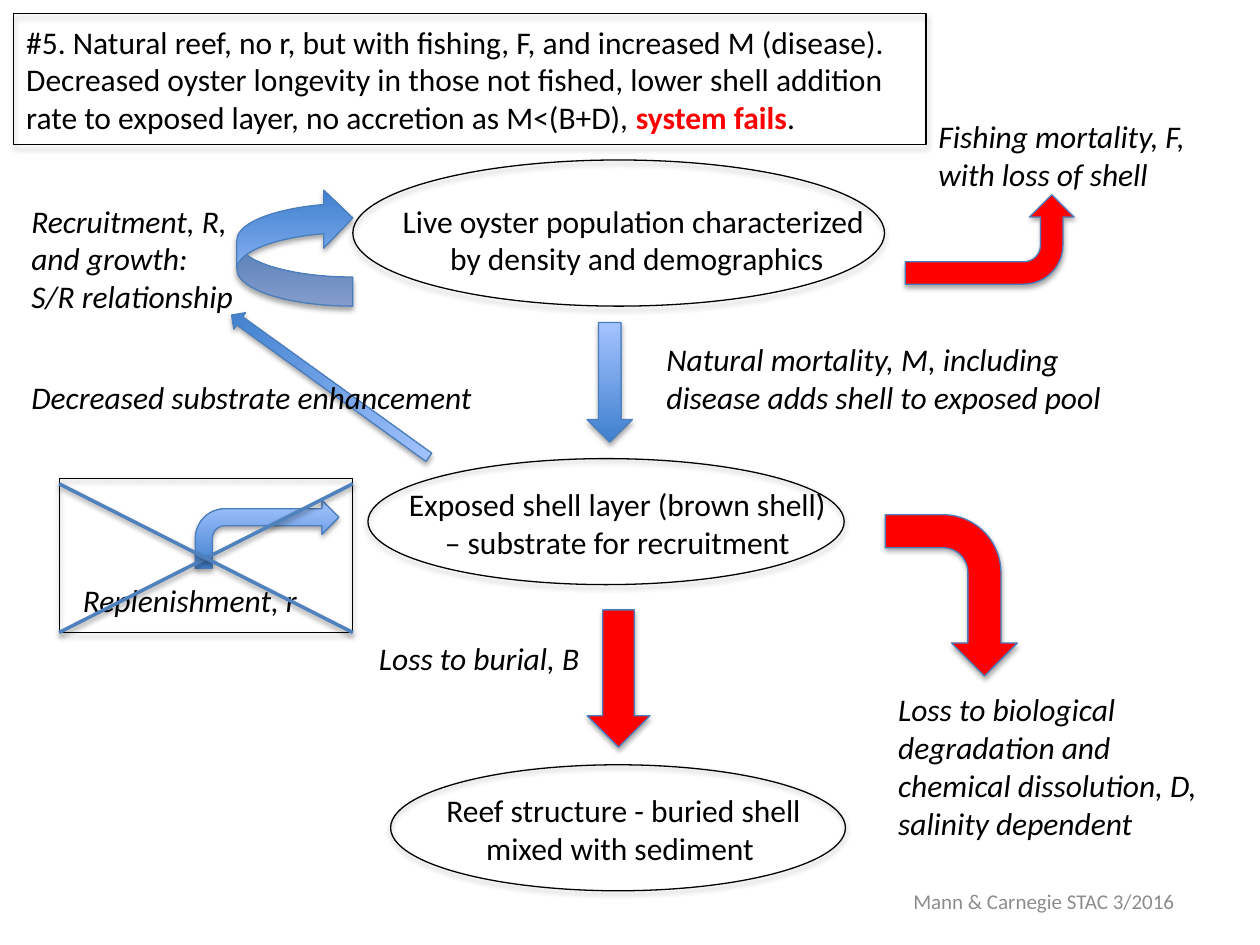
from lxml import etree
from pptx import Presentation
from pptx.dml.color import RGBColor
from pptx.enum.shapes import MSO_CONNECTOR, MSO_SHAPE
from pptx.enum.text import MSO_ANCHOR, MSO_AUTO_SIZE, PP_ALIGN
from pptx.oxml.ns import qn
from pptx.util import Inches, Pt

STRAIGHT = MSO_CONNECTOR.STRAIGHT
BENT = MSO_SHAPE.BENT_ARROW
DOWN = MSO_SHAPE.DOWN_ARROW
CURVED = MSO_SHAPE.CURVED_RIGHT_ARROW
ELLIPSE = MSO_SHAPE.OVAL
RECTANGLE = MSO_SHAPE.RECTANGLE
LEFT, CENTER = PP_ALIGN.LEFT, PP_ALIGN.CENTER

BLACK, RED, GRAY = "000000", "FF0000", "8C8C8C"
EDGE_BLUE, CROSS_BLUE = "4B7EBC", "4F81BD"
BLUE_GRADIENT = ("3F80CE", "A4C4FF")


def color(hex_value):
    return RGBColor.from_string(hex_value)


class ReefSlide:
    font_name = "Calibri"

    def __init__(self, presentation):
        self.slide = presentation.slides.add_slide(presentation.slide_layouts[6])

    def text(self, box, lines, italic=False, align=LEFT, wrap=False,
             size=18, font_color=BLACK):
        """Add a text box; a line is a string or a list of (text, emphasized)."""
        shape = self.slide.shapes.add_textbox(*map(Inches, box))
        frame = shape.text_frame
        frame.word_wrap = wrap
        frame.auto_size = MSO_AUTO_SIZE.SHAPE_TO_FIT_TEXT
        for index, line in enumerate(lines):
            paragraph = frame.add_paragraph() if index else frame.paragraphs[0]
            paragraph.alignment = align
            paragraph.font.name = self.font_name
            paragraph.font.size = Pt(size)
            paragraph.font.italic = italic
            paragraph.font.color.rgb = color(font_color)
            parts = [(line, False)] if isinstance(line, str) else line
            for words, emphasized in parts:
                run = paragraph.add_run()
                run.text = words
                if emphasized:
                    run.font.bold = True
                    run.font.color.rgb = color(RED)
        return shape

    def outline(self, kind, box):
        shape = self.slide.shapes.add_shape(kind, *map(Inches, box))
        shape.fill.background()
        self.finish(shape, BLACK, 0.75)

    def arrow(self, kind, box, fill, rotation=0, flip=None):
        shape = self.slide.shapes.add_shape(kind, *map(Inches, box))
        shape.rotation = rotation
        if flip:
            shape._element.spPr.xfrm.set(flip, "1")
        if fill == BLUE_GRADIENT:
            shape.fill.gradient()
            shape.fill.gradient_angle = 90
            for position, (stop, shade) in enumerate(zip(shape.fill.gradient_stops, fill)):
                stop.position = position
                stop.color.rgb = color(shade)
        else:
            shape.fill.solid()
            shape.fill.fore_color.rgb = color(fill)
        self.finish(shape, EDGE_BLUE, 0.75)

    def line(self, start, end):
        connector = self.slide.shapes.add_connector(
            STRAIGHT, *map(Inches, (*start, *end)))
        self.finish(connector, CROSS_BLUE, 2, distance=1.6, opacity=38)

    def finish(self, shape, line_color, width, distance=1.8, opacity=35):
        """Set the line and a soft shadow below the shape."""
        shape.line.color.rgb = color(line_color)
        shape.line.width = Pt(width)
        effects = etree.SubElement(shape._element.spPr, qn("a:effectLst"))
        shadow = etree.SubElement(
            effects, qn("a:outerShdw"), blurRad=str(Pt(3.1)),
            dist=str(Pt(distance)), dir="5400000", rotWithShape="0")
        shade = etree.SubElement(shadow, qn("a:srgbClr"), val=BLACK)
        etree.SubElement(shade, qn("a:alpha"), val=str(opacity * 1000))


def main():
    presentation = Presentation()
    presentation.slide_width, presentation.slide_height = Inches(10), Inches(7.5)
    reef = ReefSlide(presentation)

    # Names of the three pools
    for box, lines in (
        ((3.09, 1.55, 3.93, 0.71),
         ["Live oyster population characterized ", "by density and demographics"]),
        ((3.1, 3.8, 3.6, 0.71),
         ["Exposed shell layer (brown shell)", " – substrate for recruitment "]),
        ((3.42, 6.23, 3.06, 0.71),
         ["Reef structure - buried shell ", "mixed with sediment "]),
    ):
        reef.text(box, lines, align=CENTER)

    # Process labels
    for box, lines, wrap in (
        ((0.15, 1.55, 2.06, 1.01),
         ["Recruitment, R,", "and growth:", "S/R relationship"], True),
        ((7.35, 0.88, 2.36, 0.71), ["Fishing mortality, F, with loss of shell"], True),
        ((5.19, 2.65, 4.08, 0.71),
         ["Natural mortality, M, including disease adds shell to exposed pool"], True),
        ((2.91, 5.02, 1.87, 0.4), ["Loss to burial, B"], False),
        ((7.03, 5.43, 2.67, 1.31),
         ["Loss to biological", "degradation and", "chemical dissolution, D,",
          "salinity dependent"], False),
        ((0.56, 4.56, 1.99, 0.4), ["Replenishment, r"], False),
    ):
        reef.text(box, lines, italic=True, wrap=wrap)

    # Flow arrows: red for losses, blue for gains
    reef.arrow(BENT, (6.91, 4.2, 1.28, 1.05), RED, rotation=90)
    reef.arrow(BENT, (1.55, 3.97, 1.14, 0.54), BLUE_GRADIENT)
    reef.arrow(BENT, (7.5, 1.23, 0.71, 1.34), RED, rotation=90, flip="flipH")
    reef.arrow(DOWN, (4.66, 4.84, 0.5, 1.09), RED)
    reef.arrow(DOWN, (4.66, 2.56, 0.36, 0.95), BLUE_GRADIENT)
    reef.arrow(CURVED, (1.88, 1.5, 0.92, 0.93), BLUE_GRADIENT, flip="flipV")
    reef.arrow(DOWN, (2.54, 2.1, 0.16, 1.93), BLUE_GRADIENT, rotation=125.8)

    # Pool outlines
    for box in ((2.92, 3.64, 3.78, 1), (2.8, 1.27, 4.22, 1.16), (3.1, 6.07, 3.61, 1)):
        reef.outline(ELLIPSE, box)

    # Boxed heading
    reef.text((0.11, 0.13, 7.16, 1.01), [
        "#5. Natural reef, no r, but with fishing, F, and increased M (disease).",
        "Decreased oyster longevity in those not fished, lower shell addition",
        [("rate to exposed layer, no accretion as M<(B+D), ", False),
         ("system fails", True), (".", False)],
    ])
    reef.outline(RECTANGLE, (0.11, 0.11, 7.24, 1.04))

    # Crossed-out replenishment
    left, right, top, bottom = 0.47, 2.8, 3.84, 5.02
    reef.outline(RECTANGLE, (left, 3.8, right - left, 1.22))
    reef.line((left, bottom), (right, top))
    reef.line((left, top), (right, bottom))

    # Substrate label and footer
    reef.text((0.15, 2.95, 3.81, 0.4), ["Decreased substrate enhancement"], italic=True)
    footer = reef.text((6.7, 6.95, 3.17, 0.4), ["Mann & Carnegie STAC 3/2016"],
                       align=CENTER, wrap=True, size=12, font_color=GRAY)
    footer.text_frame.auto_size = MSO_AUTO_SIZE.NONE
    footer.text_frame.vertical_anchor = MSO_ANCHOR.MIDDLE

    presentation.save("out.pptx")


if __name__ == "__main__":
    main()
